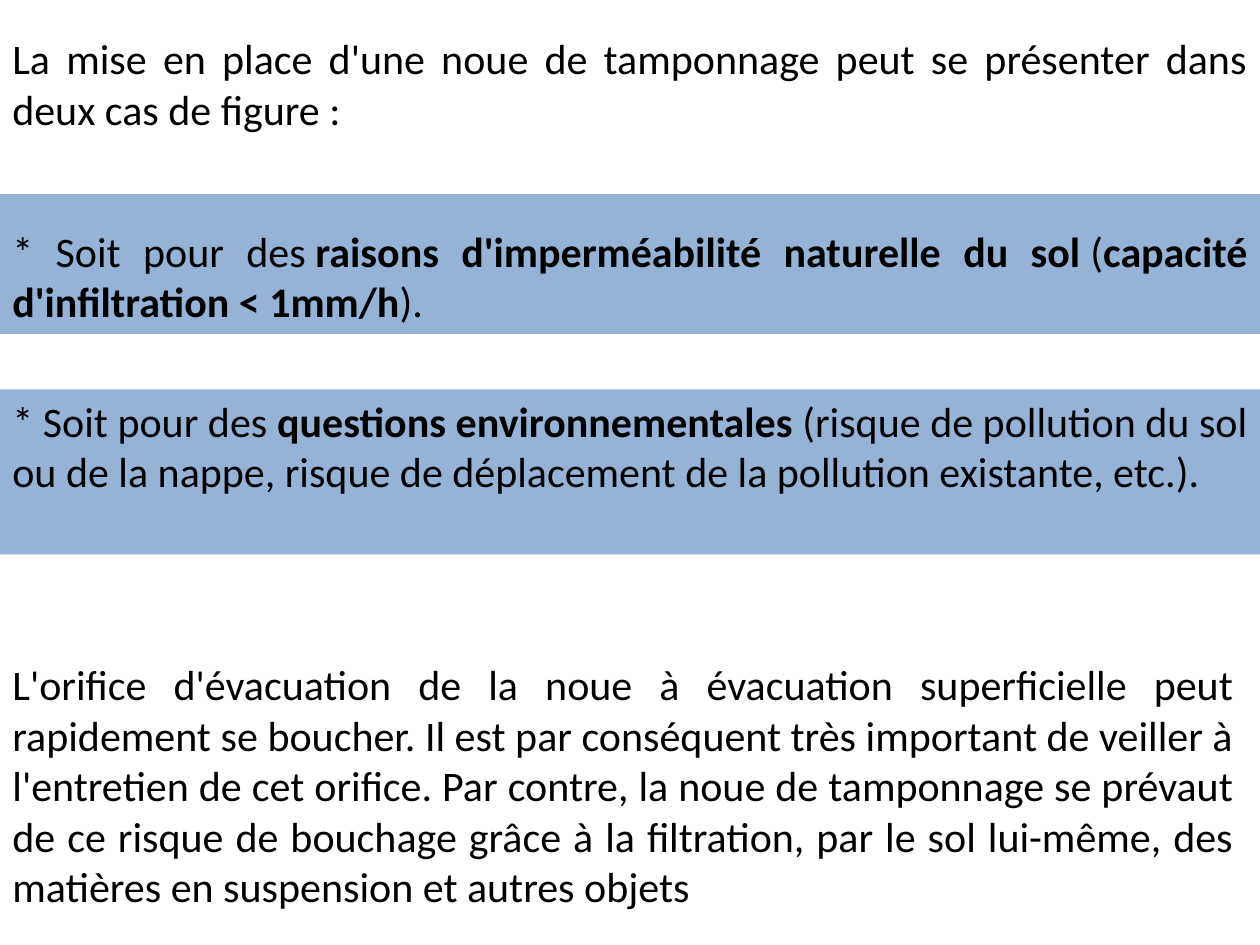
from dataclasses import dataclass

from pptx import Presentation
from pptx.dml.color import RGBColor
from pptx.enum import shapes, text
from pptx.util import Inches, Pt


@dataclass(frozen=True)
class Theme:
    font: str = "Calibri"
    size: Pt = Pt(24)
    ink: RGBColor = RGBColor(0, 0, 0)
    band: RGBColor = RGBColor(0x95, 0xB3, 0xD7)


THEME = Theme()
HARD = chr(160)  # no-break space

INTRO = ("La mise en place d'une noue de tamponnage peut se présenter "
         f"dans deux cas de figure{HARD}:")
LEAD = (f"* Soit pour des{HARD}", False)
SOIL = [
    LEAD,
    ("raisons d'imperméabilité naturelle du sol", True),
    (f"{HARD}(", False),
    ("capacité d'infiltration < 1mm/h", True),
    (").", False),
]
RISK = [
    LEAD,
    ("questions environnementales", True),
    (f"{HARD}(risque de pollution du sol ou de la nappe, risque de déplacement "
     "de la pollution existante, etc.).", False),
]
CARE = (
    "L'orifice d'évacuation de la noue à évacuation superficielle peut "
    "rapidement se boucher. Il est par conséquent très important de veiller à "
    "l'entretien de cet orifice. Par contre, la noue de tamponnage se prévaut "
    "de ce risque de bouchage grâce à la filtration, par le sol lui-même, des "
    "matières en suspension et autres objets"
)


def write(shape, parts, inset=0.05):
    """Fill a shape with one justified paragraph of (wording, bold) parts."""
    frame = shape.text_frame
    frame.word_wrap = True
    frame.vertical_anchor = text.MSO_ANCHOR.TOP
    frame.margin_top = Inches(inset)
    para = frame.paragraphs[0]
    para.alignment = text.PP_ALIGN.JUSTIFY
    para.font.name = THEME.font
    para.font.size = THEME.size
    para.font.color.rgb = THEME.ink
    for words, bold in parts:
        run = para.add_run()
        run.text = words
        if bold:
            run.font.bold = True


def add_text(slide, top, width, height, words):
    box = slide.shapes.add_textbox(0, Inches(top), Inches(width), Inches(height))
    write(box, [(words, False)])


def add_band(slide, top, height, parts, inset=0.05):
    band = slide.shapes.add_shape(
        shapes.MSO_SHAPE.RECTANGLE, 0, Inches(top), Inches(10), Inches(height))
    band.shadow.inherit = False
    band.fill.solid()
    band.fill.fore_color.rgb = THEME.band
    band.line.fill.background()
    write(band, parts, inset)


def main():
    deck = Presentation()
    deck.slide_width, deck.slide_height = Inches(10), Inches(7.5)
    slide = deck.slides.add_slide(deck.slide_layouts[6])
    add_text(slide, 0.21, 10, 0.94, INTRO)
    add_band(slide, 1.54, 1.11, SOIL, inset=0.25)
    add_band(slide, 3.09, 1.31, RISK)
    add_text(slide, 5.18, 9.89, 2.12, CARE)
    deck.save("out.pptx")


if __name__ == "__main__":
    main()
